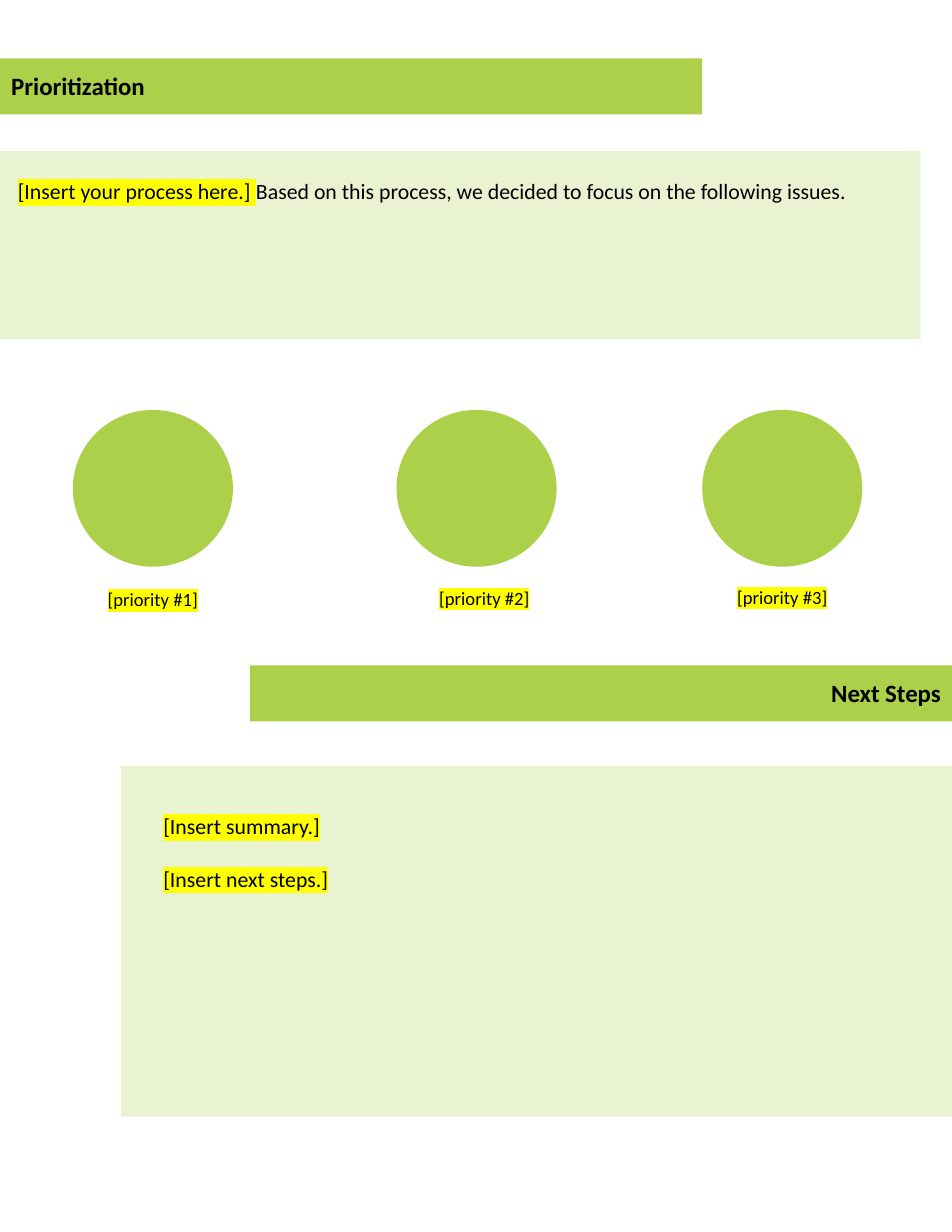
from dataclasses import dataclass

from lxml.etree import SubElement
from pptx import Presentation
from pptx.dml.color import RGBColor
from pptx.enum.shapes import MSO_SHAPE
from pptx.enum.text import MSO_ANCHOR, MSO_AUTO_SIZE, PP_ALIGN
from pptx.oxml.ns import qn
from pptx.util import Inches, Pt


@dataclass(frozen=True)
class Theme:
    """Colours, font and type sizes of the page."""
    green: str = "ACD04A"
    ink: str = "000000"
    marker: str = "FFFF00"
    font: str = "Calibri"
    heading: int = 16
    body: int = 14
    label: int = 12
    gap: int = 17
    panel_opacity: int = 25


THEME = Theme()
WIDTH, HEIGHT = Inches(8.5), Inches(11)

BARS = [(0, 4.73, 73.76, 4.55), (26.24, 54, 73.76, 4.55)]
PANELS = [(0, 12.27, 96.71, 15.27), (12.71, 62.18, 87.29, 28.45)]

TITLE = ("Prioritization", (0, 5.27, 94.71, 3.36))
NEXT_STEPS = ("Next Steps", (31.06, 54.55, 68.94, 3.36))
PROCESS = (
    [[("[Insert your process here.] ", True),
      ("Based on this process, we decided to focus on the following issues.", False)]],
    (0.71, 14, 93.88, 3.09),
)
SUMMARY = (
    [[("[Insert summary.]", True)], [("[Insert next steps.]", True)]],
    (16, 65.55, 80.71, 7.36),
)

PRIORITIES = [
    ("[priority #1]", 7.65, 6.82),
    ("[priority #2]", 41.65, 41.65),
    ("[priority #3]", 73.76, 72.94),
]
CIRCLE_TOP, CIRCLE_SIZE = 33.27, (16.82, 12.73)
LABEL_TOP, LABEL_RISE, LABEL_SIZE = 47.27, 0.09, (18.47, 2.73)


def place(shares):
    """Turn percentages of the slide into left, top, width and height."""
    return [round(share * side / 100) for share, side in zip(shares, (WIDTH, HEIGHT) * 2)]


def add_block(page, kind, shares, opacity=100):
    """Add a plain green shape."""
    block = page.shapes.add_shape(kind, *place(shares))
    block.shadow.inherit = False
    block.fill.solid()
    block.fill.fore_color.rgb = RGBColor.from_string(THEME.green)
    block.line.fill.background()
    if opacity < 100:
        colour = block.fill._xPr.find(".//" + qn("a:srgbClr"))
        SubElement(colour, qn("a:alpha"), val=str(opacity * 1000))


def highlight(span):
    """Put the marker colour behind a run of text."""
    properties = span.font._element
    mark = SubElement(properties, qn("a:highlight"))
    SubElement(mark, qn("a:srgbClr"), val=THEME.marker)
    properties.find(qn("a:solidFill")).addnext(mark)


def write(box, paragraphs, size, align=PP_ALIGN.LEFT, bold=False):
    """Fill a box with paragraphs of (text, highlighted) runs."""
    frame = box.text_frame
    frame_format = {"word_wrap": True, "vertical_anchor": MSO_ANCHOR.TOP,
                    "auto_size": MSO_AUTO_SIZE.SHAPE_TO_FIT_TEXT}
    font_format = {"size": Pt(size), "bold": bold, "name": THEME.font}
    for name, value in frame_format.items():
        setattr(frame, name, value)
    for index, runs in enumerate(paragraphs):
        para = frame.add_paragraph() if index else frame.paragraphs[0]
        para.alignment = align
        para.space_before = Pt(THEME.gap if index else 0)
        for text, marked in runs:
            span = para.add_run()
            span.text = text
            for name, value in font_format.items():
                setattr(span.font, name, value)
            span.font.color.rgb = RGBColor.from_string(THEME.ink)
            if marked:
                highlight(span)


def add_text(page, paragraphs, shares, size, **style):
    """Add a text box and write into it."""
    write(page.shapes.add_textbox(*place(shares)), paragraphs, size, **style)


def add_title(page, text, shares):
    """Move the title placeholder in front of its bar and write into it."""
    title = page.shapes.title
    title.left, title.top, title.width, title.height = place(shares)
    title.element.getparent().append(title.element)
    write(title, [[(text, False)]], THEME.heading, bold=True)


def main():
    """Build the page and save it."""
    deck = Presentation()
    deck.slide_width, deck.slide_height = WIDTH, HEIGHT
    page = deck.slides.add_slide(deck.slide_layouts[5])

    for shares in PANELS:
        add_block(page, MSO_SHAPE.RECTANGLE, shares, THEME.panel_opacity)
    for shares in BARS:
        add_block(page, MSO_SHAPE.RECTANGLE, shares)

    add_title(page, *TITLE)
    heading, shares = NEXT_STEPS
    add_text(page, [[(heading, False)]], shares, THEME.heading,
             align=PP_ALIGN.RIGHT, bold=True)
    for paragraphs, shares in (PROCESS, SUMMARY):
        add_text(page, paragraphs, shares, THEME.body)

    for index, (label, circle_left, label_left) in enumerate(PRIORITIES):
        add_block(page, MSO_SHAPE.OVAL, (circle_left, CIRCLE_TOP, *CIRCLE_SIZE))
        label_top = LABEL_TOP - index * LABEL_RISE
        add_text(page, [[(label, True)]], (label_left, label_top, *LABEL_SIZE),
                 THEME.label, align=PP_ALIGN.CENTER)

    deck.save("out.pptx")


if __name__ == "__main__":
    main()
